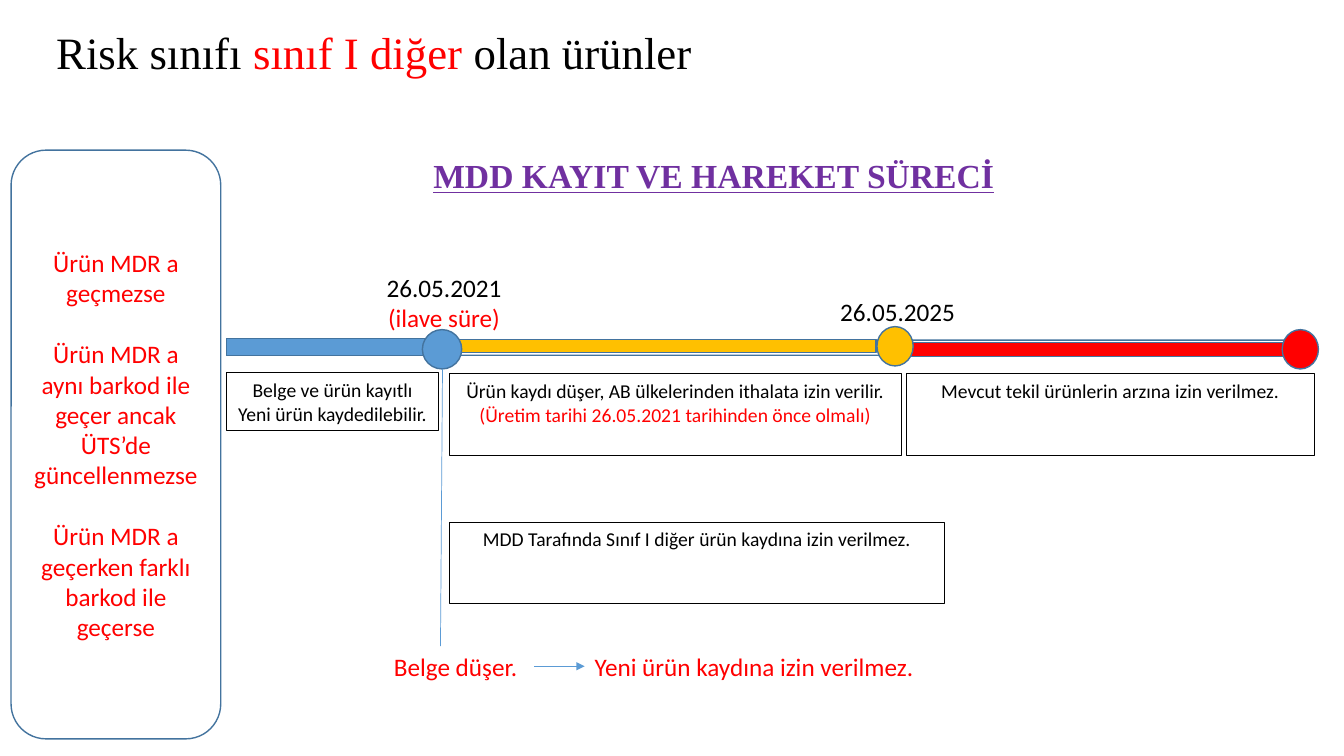
import pptx
import pptx.util
import pptx.dml.color
import pptx.oxml.ns
import pptx.enum.shapes
import pptx.enum.text
import lxml.etree

CELL = 0.1  # grid cell in inches; every box is (column, row, columns, rows)
KIND = pptx.enum.shapes.MSO_SHAPE
ALIGN = pptx.enum.text.PP_ALIGN
ANCHOR = pptx.enum.text.MSO_ANCHOR
BLACK, WHITE, RED = "000000", "FFFFFF", "FF0000"
BLUE, GOLD, EDGE, PURPLE = "5B9BD5", "FFC000", "43739E", "7030A0"
SANS, SERIF = "Calibri", "Times New Roman"


def cells(*counts):
    return [pptx.util.Inches(n * CELL) for n in counts]


def color(text):
    return pptx.dml.color.RGBColor.from_string(text)


def style(font, size, tint, face=SANS):
    font.size = pptx.util.Pt(size)
    font.name = face
    font.color.rgb = color(tint)


def shape(slide, kind, box, fill=None, edge=EDGE, width=1):
    item = slide.shapes.add_shape(kind, *cells(*box))
    item.shadow.inherit = False
    if fill:
        item.fill.solid()
        item.fill.fore_color.rgb = color(fill)
    else:
        item.fill.background()
    item.line.color.rgb = color(edge)
    item.line.width = pptx.util.Pt(width)
    return item


def write(item, lines, size, align=ALIGN.CENTER, gap=0, wrap=True, anchor=ANCHOR.TOP):
    """Fill an item with (text, colour) lines, one paragraph each."""
    frame = item.text_frame
    frame.word_wrap = wrap
    frame.vertical_anchor = anchor
    for i, (text, tint) in enumerate(lines):
        para = frame.add_paragraph() if i else frame.paragraphs[0]
        para.text = text
        para.alignment = align
        para.space_before = pptx.util.Pt(gap if i else 0)
        style(para.font, size, tint)


def label(slide, box, lines, **options):
    write(slide.shapes.add_textbox(*cells(*box)), lines, 18, **options)


def line(slide, start, end, arrow=False):
    item = slide.shapes.add_connector(
        pptx.enum.shapes.MSO_CONNECTOR.STRAIGHT, *cells(*start, *end))
    item.line.color.rgb = color(BLUE)
    item.line.width = pptx.util.Pt(0.5)
    qn = pptx.oxml.ns.qn
    if arrow:
        lxml.etree.SubElement(item.line._get_or_add_ln(), qn("a:tailEnd"), type="triangle")
    lxml.etree.SubElement(item._element.spPr, qn("a:effectLst"))


def title(slide, box):
    frame = slide.shapes.add_textbox(*cells(*box)).text_frame
    frame.word_wrap = True
    frame.vertical_anchor = ANCHOR.MIDDLE
    para = frame.paragraphs[0]
    para.line_spacing = 0.9
    parts = [("Risk sınıfı ", BLACK), ("sınıf I diğer ", RED), ("olan ürünler", BLACK)]
    for text, tint in parts:
        run = para.add_run()
        run.text = text
        style(run.font, 32, tint, SERIF)


def heading(slide, box):
    frame = slide.shapes.add_textbox(*cells(*box)).text_frame
    frame.word_wrap = False
    para = frame.paragraphs[0]
    para.text = "MDD KAYIT VE HAREKET SÜRECİ"
    style(para.font, 24, PURPLE, SERIF)
    para.font.bold = para.font.underline = True


def sidebar(slide, box):
    cases = ["Ürün MDR a geçmezse",
             "Ürün MDR a aynı barkod ile geçer ancak ÜTS’de güncellenmezse",
             "Ürün MDR a geçerken farklı barkod ile geçerse"]
    panel = shape(slide, KIND.ROUNDED_RECTANGLE, box, WHITE)
    write(panel, [(case, RED) for case in cases], 18, gap=22, anchor=ANCHOR.MIDDLE)


def timeline(slide, box):
    left, top, width, height = box
    # Arrow under the bars
    shape(slide, KIND.RIGHT_ARROW, (left, top + 0.6, width - 1, 3), WHITE)
    # Period bars: offset, drop, length, thickness
    bars = [(0, 1.2, 20.3, 1.7, BLUE), (22.2, 1.3, 42.2, 1.3, GOLD),
            (67, 1.6, 40.9, 1.4, RED)]
    for x, y, w, h, fill in bars:
        shape(slide, KIND.RECTANGLE, (left + x, top + y, w, h), fill)
    # Milestone dots: offset, drop, width
    dots = [(19.4, 0.3, 3.9, BLUE), (64.5, 0, 3.6, GOLD), (width - 3.6, 0.3, 3.6, RED)]
    for x, y, w, fill in dots:
        shape(slide, KIND.OVAL, (left + x, top + y, w, height), fill)
    # Dates above the dots
    label(slide, (left + 13.9, top - 5.9, 15.3, 7.1),
          [("26.05.2021", BLACK), ("(ilave süre)", RED)])
    label(slide, (left + 54.2, top - 3.5, 24.7, 4), [("26.05.2025", BLACK)])


def notes(slide, box):
    left, top, width, height = box
    tall = 8.1
    boxes = [
        (0, 0, 21, 5.7, [("Belge ve ürün kayıtlı", BLACK),
                         ("Yeni ürün kaydedilebilir.", BLACK)]),
        (22.1, 0.1, 44.8, tall,
         [("Ürün kaydı düşer, AB ülkelerinden ithalata izin verilir.", BLACK),
          ("(Üretim tarihi 26.05.2021 tarihinden önce olmalı)", RED)]),
        (67.4, 0.1, width - 67.4, tall,
         [("Mevcut tekil ürünlerin arzına izin verilmez.", BLACK)]),
        (22.1, height - tall, 49.1, tall,
         [("MDD Tarafında Sınıf I diğer ürün kaydına izin verilmez.", BLACK)]),
    ]
    for x, y, w, h, lines in boxes:
        item = shape(slide, KIND.RECTANGLE, (left + x, top + y, w, h),
                     edge=BLACK, width=0.75)
        write(item, lines, 14)


def outcome(slide, box):
    left, top, width, height = box
    # Drop line from the first milestone
    line(slide, (left + 5.6, top), (left + 5.8, top - 27.5))
    # Result and consequence
    label(slide, (left, top, 15, height), [("Belge düşer.", RED)],
          align=ALIGN.LEFT, wrap=False)
    line(slide, (left + 14.9, top + height / 2), (left + 19.9, top + height / 2), arrow=True)
    label(slide, (left + 19.9, top, width - 19.9, height),
          [("Yeni ürün kaydına izin verilmez.", RED)], align=ALIGN.LEFT)


def main():
    deck = pptx.Presentation()
    deck.slide_width, deck.slide_height = cells(133.33, 75)
    slide = deck.slides.add_slide(deck.slide_layouts[6])
    sidebar(slide, (1.1, 14.9, 20.8, 58.4))
    timeline(slide, (22.5, 32.4, 108.3, 3.9))
    title(slide, (4.6, 1.3, 115, 8.4))
    heading(slide, (42, 14.9, 58.2, 5))
    outcome(slide, (38.1, 64.1, 64.8, 4))
    notes(slide, (22.5, 37, 107.9, 22.9))
    deck.save("out.pptx")


if __name__ == "__main__":
    main()
